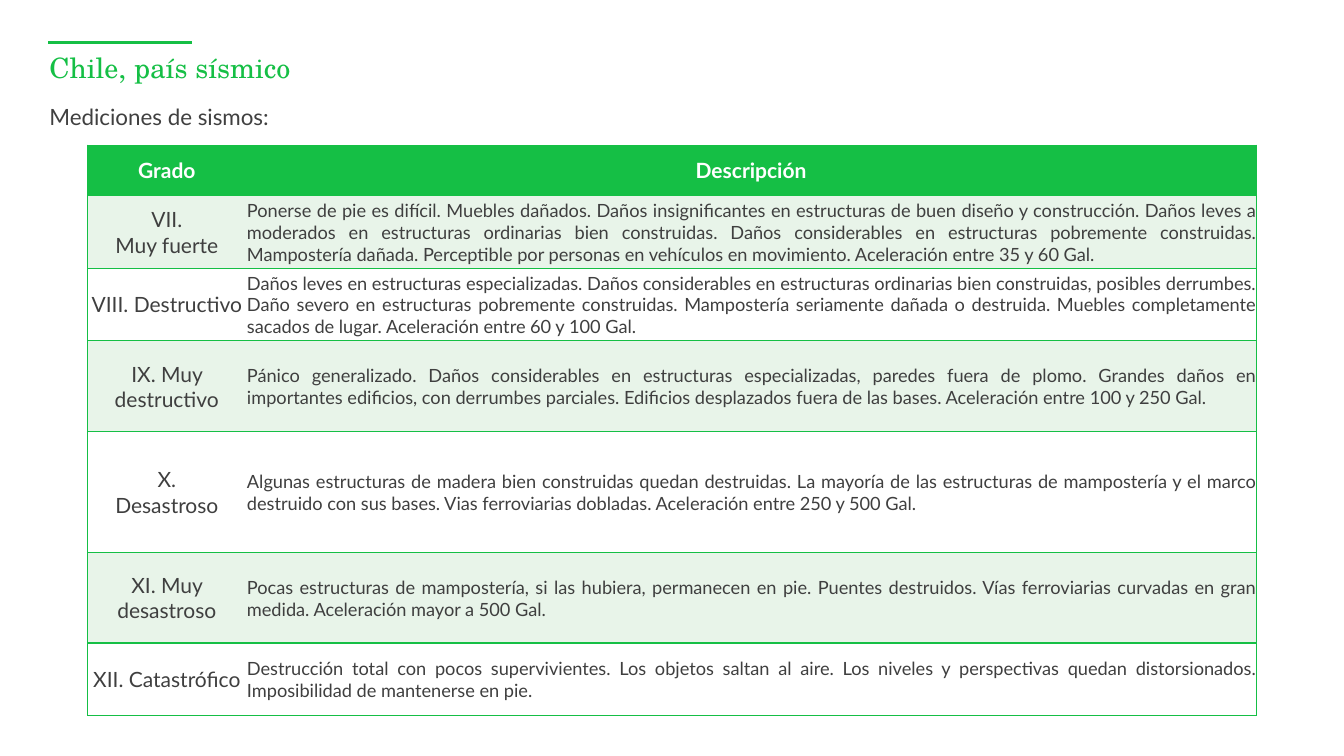
"""Slide with a table of seismic intensity grades and their effects."""
from dataclasses import dataclass

from lxml import etree
from pptx import Presentation
from pptx.dml.color import RGBColor
from pptx.enum.shapes import MSO_CONNECTOR
from pptx.enum.text import MSO_ANCHOR, PP_ALIGN
from pptx.oxml.ns import qn
from pptx.slide import Slide
from pptx.table import _Cell
from pptx.text.text import _Paragraph
from pptx.util import Inches, Pt

STRAIGHT = MSO_CONNECTOR.STRAIGHT
MIDDLE = MSO_ANCHOR.MIDDLE
CENTER = PP_ALIGN.CENTER
JUSTIFY = PP_ALIGN.JUSTIFY

GREEN = RGBColor(0x15, 0xBF, 0x45)
PALE_GREEN = RGBColor(0xE8, 0xF4, 0xE9)
WHITE = RGBColor(0xFF, 0xFF, 0xFF)
HEADING_GRAY = RGBColor(0x40, 0x40, 0x40)
BODY_GRAY = RGBColor(0x3F, 0x3F, 0x3F)

SANS = "Lato"
SERIF = "TeX Gyre Schola"


@dataclass(frozen=True)
class Style:
    size: float
    color: RGBColor
    font: str = SANS
    bold: bool = False
    align: PP_ALIGN | None = None


@dataclass(frozen=True)
class Heading:
    text: str
    top: float
    height: float
    style: Style


@dataclass(frozen=True)
class Grade:
    lines: tuple[str, ...]
    description: str
    height: float


HEADER_STYLE = Style(15, WHITE, bold=True, align=CENTER)
GRADE_STYLE = Style(15, BODY_GRAY, align=CENTER)
DESCRIPTION_STYLE = Style(13, BODY_GRAY, align=JUSTIFY)

HEADINGS = (
    Heading("Chile, país sísmico", 0.54, 0.57, Style(20, GREEN, SERIF)),
    Heading("Mediciones de sismos:", 1.05, 0.39, Style(16, HEADING_GRAY)),
)

COLUMN_WIDTHS = (1.57, 10.02)
HEADER_HEIGHT = 0.5
GRADES = (
    Grade(
        ("VII.", "Muy fuerte"),
        "Ponerse de pie es difícil. Muebles dañados. Daños insignificantes en estructuras "
        "de buen diseño y construcción. Daños leves a moderados en estructuras ordinarias "
        "bien construidas. Daños considerables en estructuras pobremente construidas. "
        "Mampostería dañada. Perceptible por personas en vehículos en movimiento. "
        "Aceleración entre 35 y 60 Gal.",
        0.72,
    ),
    Grade(
        ("VIII. Destructivo",),
        "Daños leves en estructuras especializadas. Daños considerables en estructuras "
        "ordinarias bien construidas, posibles derrumbes. Daño severo en estructuras "
        "pobremente construidas. Mampostería seriamente dañada o destruida. Muebles "
        "completamente sacados de lugar. Aceleración entre 60 y 100 Gal.",
        0.72,
    ),
    Grade(
        ("IX. Muy destructivo",),
        "Pánico generalizado. Daños considerables en estructuras especializadas, paredes "
        "fuera de plomo. Grandes daños en importantes edificios, con derrumbes parciales. "
        "Edificios desplazados fuera de las bases. Aceleración entre 100 y 250 Gal.",
        0.9,
    ),
    Grade(
        ("X.", "Desastroso"),
        "Algunas estructuras de madera bien construidas quedan destruidas. La mayoría de "
        "las estructuras de mampostería y el marco destruido con sus bases. Vias "
        "ferroviarias dobladas. Aceleración entre 250 y 500 Gal.",
        1.2,
    ),
    Grade(
        ("XI. Muy desastroso",),
        "Pocas estructuras de mampostería, si las hubiera, permanecen en pie. Puentes "
        "destruidos. Vías ferroviarias curvadas en gran medida. Aceleración mayor a 500 Gal.",
        0.9,
    ),
    Grade(
        ("XII. Catastrófico",),
        "Destrucción total con pocos supervivientes. Los objetos saltan al aire. Los "
        "niveles y perspectivas quedan distorsionados. Imposibilidad de mantenerse en pie.",
        0.72,
    ),
)


def write(paragraph: _Paragraph, text: str, style: Style) -> None:
    """Add one styled run to a paragraph."""
    paragraph.alignment = style.align
    run = paragraph.add_run()
    run.text = text
    run.font.size = Pt(style.size)
    run.font.name = style.font
    run.font.bold = style.bold
    run.font.color.rgb = style.color


def draw_accent(slide: Slide) -> None:
    """Draw the short rule above the title."""
    accent = slide.shapes.add_connector(
        STRAIGHT, Inches(0.48), Inches(0.42), Inches(1.9), Inches(0.42)
    )
    accent.line.color.rgb = GREEN
    accent.line.width = Pt(1.75)
    etree.SubElement(accent._element.spPr, qn("a:effectLst"))


def draw_heading(slide: Slide, heading: Heading) -> None:
    """Draw a line of text above the table."""
    frame = slide.shapes.add_textbox(
        Inches(0.49), Inches(heading.top), Inches(10.79), Inches(heading.height)
    ).text_frame
    frame.word_wrap = True
    frame.margin_left = frame.margin_right = frame.margin_top = frame.margin_bottom = 0
    frame.paragraphs[0].line_spacing = 0.9
    write(frame.paragraphs[0], heading.text, heading.style)


def set_borders(cell: _Cell, green_sides: str) -> None:
    """Draw the named sides in green and hide the others."""
    properties = cell._tc.get_or_add_tcPr()
    for side in "LRTB":
        border = etree.SubElement(properties, qn(f"a:ln{side}"), w=str(Pt(1)))
        if side in green_sides:
            fill = etree.SubElement(border, qn("a:solidFill"))
            etree.SubElement(fill, qn("a:srgbClr"), val=str(GREEN))
        else:
            etree.SubElement(border, qn("a:noFill"))


def fill_cell(
    cell: _Cell, lines: tuple[str, ...], style: Style, background: RGBColor, green_sides: str
) -> None:
    """Set the text, borders and background of a cell."""
    cell.margin_left = cell.margin_right = cell.margin_top = Inches(0.01)
    cell.margin_bottom = 0
    cell.vertical_anchor = MIDDLE
    set_borders(cell, green_sides)
    cell.fill.solid()
    cell.fill.fore_color.rgb = background
    for index, line in enumerate(lines):
        frame = cell.text_frame
        paragraph = frame.add_paragraph() if index else frame.paragraphs[0]
        write(paragraph, line, style)


def draw_grades(slide: Slide) -> None:
    """Draw the table of grades and descriptions."""
    heights = (HEADER_HEIGHT, *(grade.height for grade in GRADES))
    table = slide.shapes.add_table(
        len(heights), len(COLUMN_WIDTHS), Inches(0.87), Inches(1.44),
        Inches(sum(COLUMN_WIDTHS)), Inches(sum(heights)),
    ).table
    for column, width in zip(table.columns, COLUMN_WIDTHS):
        column.width = Inches(width)
    for row, height in zip(table.rows, heights):
        row.height = Inches(height)

    fill_cell(table.cell(0, 0), ("Grado",), HEADER_STYLE, GREEN, "LTB")
    fill_cell(table.cell(0, 1), ("Descripción",), HEADER_STYLE, GREEN, "RTB")
    for index, grade in enumerate(GRADES, start=1):
        band = PALE_GREEN if index % 2 else WHITE
        fill_cell(table.cell(index, 0), grade.lines, GRADE_STYLE, band, "LTB")
        fill_cell(table.cell(index, 1), (grade.description,), DESCRIPTION_STYLE, band, "RTB")


def main() -> None:
    """Build and save the presentation."""
    presentation = Presentation()
    presentation.slide_width = Inches(13.33)
    presentation.slide_height = Inches(7.5)
    slide = presentation.slides.add_slide(presentation.slide_layouts[6])
    draw_accent(slide)
    for heading in HEADINGS:
        draw_heading(slide, heading)
    draw_grades(slide)
    presentation.save("out.pptx")


if __name__ == "__main__":
    main()
